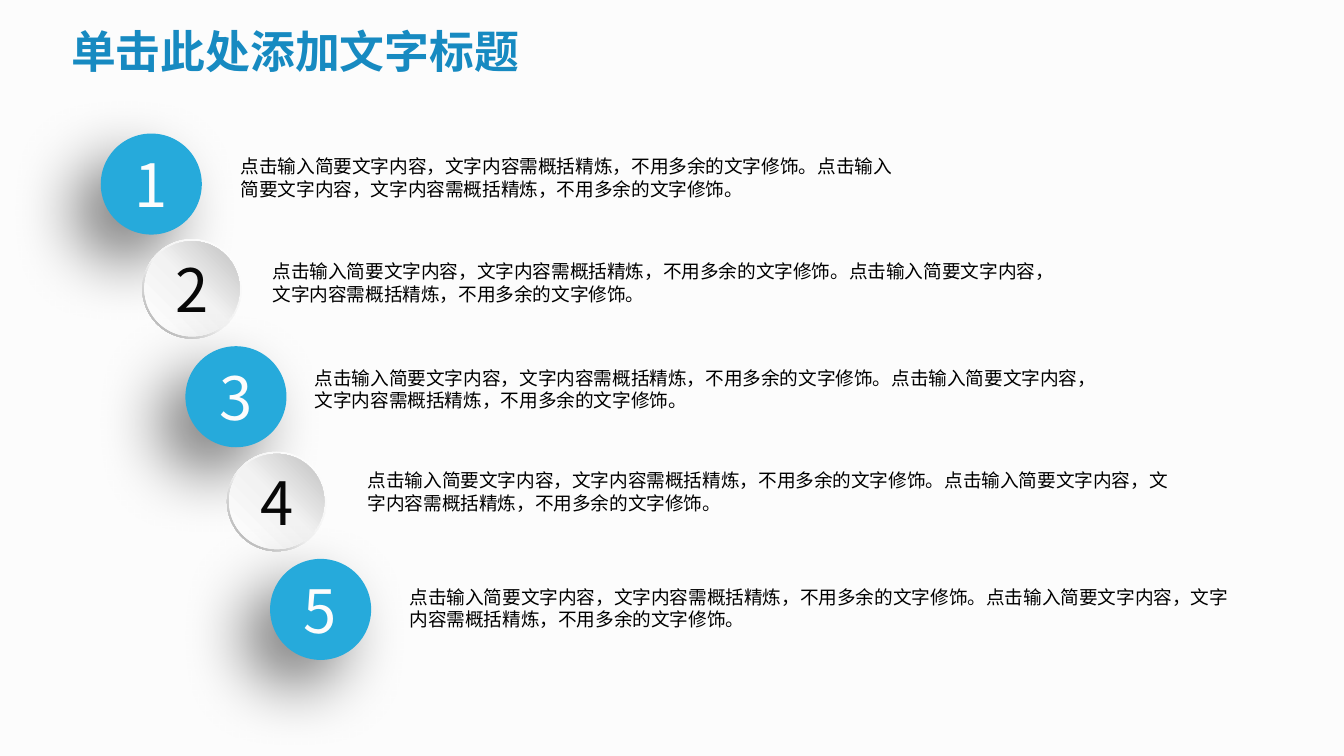
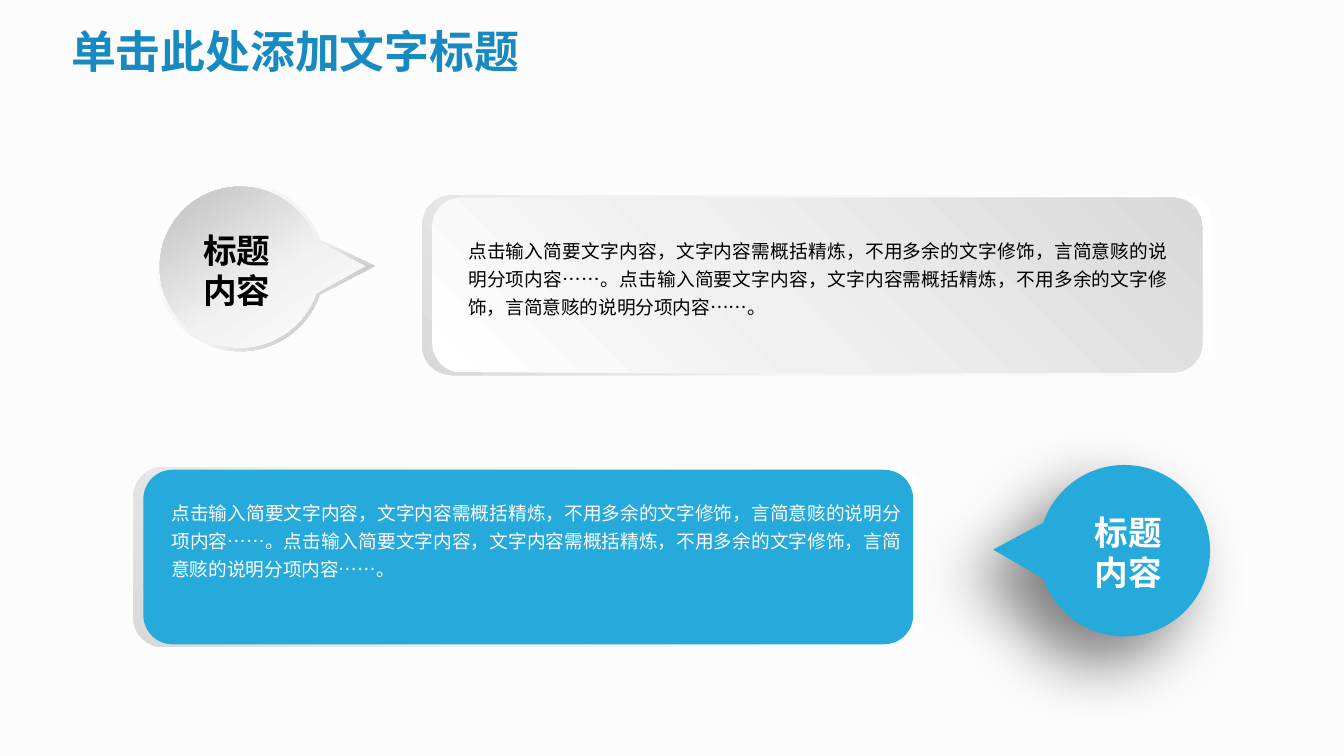
from dataclasses import dataclass
from math import cos, pi, radians, sin, tan
from typing import Any, NamedTuple

from lxml import etree
from pptx import Presentation
from pptx.dml.color import RGBColor
from pptx.enum.shapes import MSO_SHAPE
from pptx.enum.text import MSO_ANCHOR, MSO_AUTO_SIZE, PP_ALIGN
from pptx.oxml.ns import qn
from pptx.util import Cm, Pt

OVAL, RING, CARD = MSO_SHAPE.OVAL, MSO_SHAPE.DONUT, MSO_SHAPE.ROUNDED_RECTANGLE
LEFT, MID, FULL = PP_ALIGN.LEFT, PP_ALIGN.CENTER, PP_ALIGN.JUSTIFY
TOP, CORE = MSO_ANCHOR.TOP, MSO_ANCHOR.MIDDLE
GROW = MSO_AUTO_SIZE.SHAPE_TO_FIT_TEXT


class Grade(NamedTuple):
    stops: tuple[tuple[int, str], ...]
    angle: int


@dataclass(frozen=True)
class Theme:
    font: str = "Noto Sans CJK SC"
    paper: str = "FCFCFC"
    head: str = "178AC1"
    blue: str = "26AADB"
    black: str = "000000"
    ink: str = "080808"
    white: str = "FFFFFF"
    title: int = 24
    digit: int = 32
    label: int = 18
    body: int = 10
    lead: int = 15
    ring: Grade = Grade(((0, "FFFFFF"), (55, "F2F2F2"), (100, "A6A6A6")), 135)
    dome: Grade = Grade(((0, "FFFFFF"), (51, "F2F2F2"), (100, "BFBFBF")), 315)
    edge: Grade = Grade(((0, "FFFFFF"), (55, "F2F2F2"), (100, "A6A6A6")), 45)
    drop: Grade = Grade(((0, "FFFFFF"), (43, "F2F2F2"), (100, "BFBFBF")), 235)
    back: Grade = Grade(((0, "FFFFFF"), (62, "F2F2F2"), (100, "D9D9D9")), 135)
    face: Grade = Grade(((0, "FFFFFF"), (42, "F0F0F0"), (100, "D9D9D9")), 315)


LOOK = Theme()
HEAD = "单击此处添加文字标题"
STEP = "点击输入简要文字内容，文字内容需概括精炼，不用多余的文字修饰。" * 2
NOTE = "点击输入简要文字内容，文字内容需概括精炼，不用多余的文字修饰，言简意赅的说明分项内容……。" * 2
LABEL = "标题\n内容"


class Box(NamedTuple):
    x: float
    y: float
    w: float
    h: float


class Type(NamedTuple):
    size: int
    color: str
    bold: bool = False
    align: Any = LEFT
    lead: int = 0


class Drop(NamedTuple):
    x: float
    y: float
    r: float
    tip: float
    fill: str | Grade
    hole: float = 0
    shade: bool = False


class Panel(NamedTuple):
    x: float
    y: float
    fill: str | Grade
    text: Box
    color: str


STEPS = (
    Box(4.3, 2.81, 13, 1.12),
    Box(4.9, 4.79, 15.19, 1.12),
    Box(5.7, 6.81, 15.39, 1.12),
    Box(6.7, 8.74, 15.8, 1.12),
    Box(7.49, 10.95, 16.21, 1.12),
)
PANELS = (
    Panel(7.98, 3.69, LOOK.face, Box(8.85, 4.43, 13.21, 1.55), LOOK.black),
    Panel(2.52, 8.83, LOOK.blue, Box(3.24, 9.38, 13.79, 1.6), LOOK.paper),
)
GRAYS = (
    Drop(4.54, 5.05, 1.59, 2.54, LOOK.edge, 1.44),
    Drop(4.54, 5.05, 1.52, 2.36, LOOK.drop),
)
BLUE = Drop(21.25, 10.41, 1.62, -2.48, LOOK.blue, shade=True)
LABELS = (
    (Box(3.26, 4.35, 2.44, 1.55), LOOK.black),
    (Box(20.1, 9.68, 2.44, 1.55), LOOK.white),
)


def assign(item: Any, values: dict[str, Any]) -> None:
    for name, value in values.items():
        setattr(item, name, value)


def cast(shape: Any) -> None:
    effects = shape.element.spPr.find(qn("a:effectLst"))
    shade = etree.SubElement(
        effects, qn("a:outerShdw"), blurRad=str(Pt(35)), dist=str(Pt(20)),
        dir="8100000", algn="tr", rotWithShape="0")
    tone = etree.SubElement(shade, qn("a:srgbClr"), val=LOOK.black)
    etree.SubElement(tone, qn("a:alpha"), val="50000")


def paint(shape: Any, fill: str | Grade, shade: bool = False) -> None:
    shape.shadow.inherit = False
    shape.line.fill.background()
    if isinstance(fill, Grade):
        shape.fill.gradient()
        shape.fill.gradient_angle = 360 - fill.angle
        stops = shape.element.spPr.find(qn("a:gradFill")).find(qn("a:gsLst"))
        for old in list(stops):
            stops.remove(old)
        for place, color in fill.stops:
            stop = etree.SubElement(stops, qn("a:gs"), pos=str(place * 1000))
            etree.SubElement(stop, qn("a:srgbClr"), val=color)
    else:
        shape.fill.solid()
        shape.fill.fore_color.rgb = RGBColor.from_string(fill)
    if shade:
        cast(shape)


def write(frame: Any, text: str, style: Type, **values: Any) -> None:
    frame.text = text
    assign(frame, values)
    for para in frame.paragraphs:
        para.alignment = style.align
        if style.lead:
            para.line_spacing = Pt(style.lead)
        for run in para.runs:
            assign(run.font, {"size": Pt(style.size), "bold": style.bold, "name": LOOK.font})
            run.font.color.rgb = RGBColor.from_string(style.color)
            etree.SubElement(run.font._element, qn("a:ea"), typeface=LOOK.font)


def place(slide: Any, box: Box, text: str, style: Type, inset: bool = True) -> None:
    frame = slide.shapes.add_textbox(*map(Cm, box)).text_frame
    sides = ("left", "top", "right", "bottom")
    pads = {} if inset else {f"margin_{side}": 0 for side in sides}
    write(frame, text, style, word_wrap=True, auto_size=GROW, vertical_anchor=TOP, **pads)


def shape(shapes: Any, kind: Any, box: Box, fill: str | Grade, shade: bool = False) -> Any:
    item = shapes.add_shape(kind, *map(Cm, box))
    paint(item, fill, shade)
    return item


def disc(shapes: Any, kind: Any, x: float, y: float, size: float,
         fill: str | Grade, shade: bool = False) -> Any:
    return shape(shapes, kind, Box(x - size / 2, y - size / 2, size, size), fill, shade)


def arc(r: float, first: int) -> list[tuple[float, float]]:
    turns = [radians(turn) for turn in (first, 90, 180, 270, 360 - first)]
    points = [(r * cos(turns[0]), r * sin(turns[0]))]
    for a, b in zip(turns, turns[1:]):
        pull = 4 / 3 * tan((b - a) / 4)
        points += [
            (r * (cos(a) - pull * sin(a)), r * (sin(a) + pull * cos(a))),
            (r * (cos(b) + pull * sin(b)), r * (sin(b) - pull * cos(b))),
            (r * cos(b), r * sin(b)),
        ]
    return points


def curve(item: Any) -> None:
    for end in list(item.element.iter(qn("a:close"))):
        lines = list(end.itersiblings(qn("a:lnTo"), preceding=True))[:12][::-1]
        for k in range(0, 12, 3):
            bend = etree.Element(qn("a:cubicBezTo"))
            lines[k].addprevious(bend)
            for line in lines[k:k + 3]:
                bend.append(line[0])
                line.getparent().remove(line)


def bubble(shapes: Any, drop: Drop) -> None:
    side = 1 if drop.tip > 0 else -1

    def spot(x: float, y: float) -> tuple[int, int]:
        return Cm(drop.x + side * x), Cm(drop.y + y)

    path = shapes.build_freeform(*spot(abs(drop.tip), -0.02))
    path.add_line_segments([spot(*point) for point in arc(drop.r, 19)], close=True)
    if drop.hole:
        path.move_to(*spot(0.74, 0.88))
        points = [(0.74, -0.88)] + arc(drop.hole, 26)[::-1]
        path.add_line_segments([spot(*point) for point in points], close=True)
    item = path.convert_to_shape()
    curve(item)
    paint(item, drop.fill, drop.shade)


def start(deck: Any) -> Any:
    slide = deck.slides.add_slide(deck.slide_layouts[5])
    title = slide.shapes.title
    assign(title, {"left": Cm(1.09), "top": Cm(0.33), "width": Cm(9.07), "height": Cm(1.27)})
    write(title.text_frame, HEAD, Type(LOOK.title, LOOK.head, True),
          word_wrap=False, auto_size=GROW, vertical_anchor=TOP)
    return slide


def stairs(deck: Any) -> None:
    slide = start(deck)
    for step, box in enumerate(STEPS):
        x, y = 2.86 + 0.8 * step, 3.48 + 2.01 * step
        if step % 2:
            x, y = x - 0.03, y - 0.03
            group = slide.shapes.add_group_shape().shapes
            ring = disc(group, RING, x, y, 1.88, LOOK.ring)
            ring.adjustments[0] = 0.049
            ball, color = disc(group, OVAL, x, y, 1.8, LOOK.dome), LOOK.ink
        else:
            ball, color = disc(slide.shapes, OVAL, x, y, 1.91, LOOK.blue, True), LOOK.paper
        write(ball.text_frame, str(step + 1), Type(LOOK.digit, color, align=MID),
              vertical_anchor=CORE)
        place(slide, box, STEP, Type(LOOK.body, LOOK.black))


def panels(deck: Any) -> None:
    slide = start(deck)
    bubble(slide.shapes, BLUE)
    group = slide.shapes.add_group_shape().shapes
    for drop in GRAYS:
        bubble(group, drop)
    for panel in PANELS:
        group = slide.shapes.add_group_shape().shapes
        shape(group, CARD, Box(panel.x, panel.y, 14.94, 3.4), LOOK.back)
        shape(group, CARD, Box(panel.x + 0.19, panel.y + 0.05, 14.55, 3.3), panel.fill)
        style = Type(LOOK.body, panel.color, align=FULL, lead=LOOK.lead)
        place(slide, panel.text, NOTE, style, inset=False)
    for box, color in LABELS:
        place(slide, box, LABEL, Type(LOOK.label, color, True, MID), inset=False)


def main() -> None:
    deck = Presentation()
    assign(deck, {"slide_width": Cm(25.4), "slide_height": Cm(14.29)})
    paper = deck.slide_master.background.fill
    paper.solid()
    paper.fore_color.rgb = RGBColor.from_string(LOOK.paper)
    stairs(deck)
    panels(deck)
    deck.save("out.pptx")


if __name__ == "__main__":
    main()
